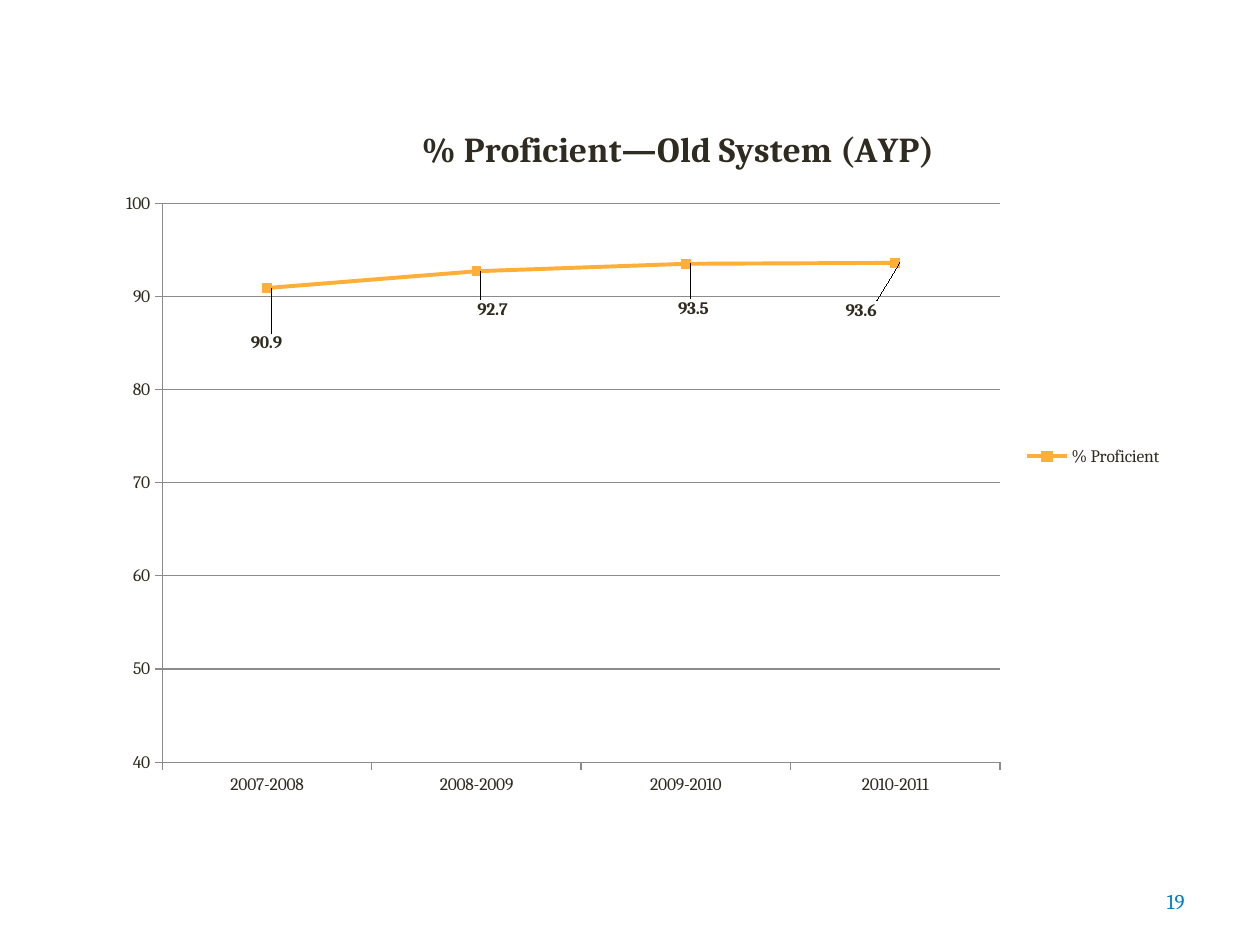
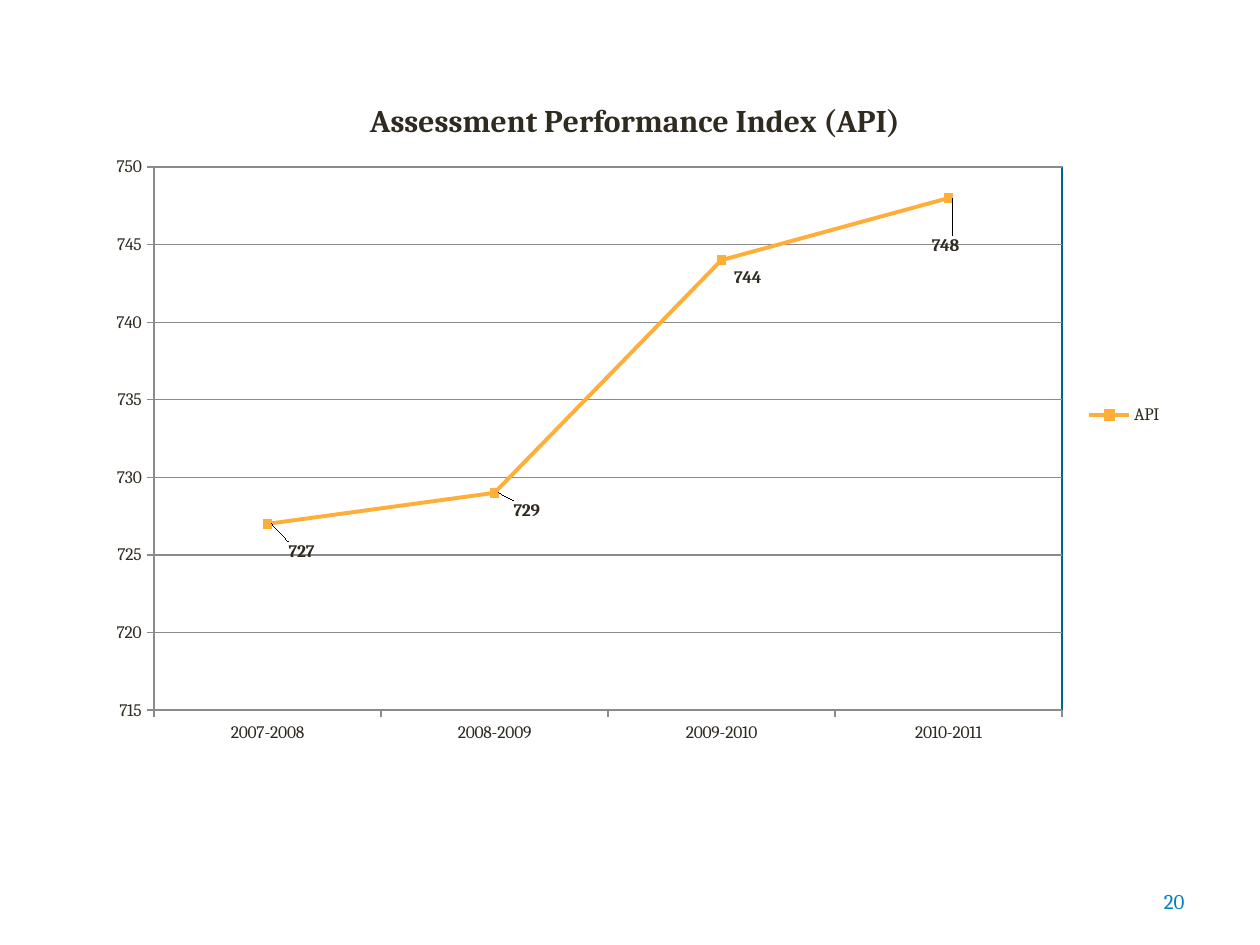
import pptx
import pptx.chart.data
import pptx.dml.color
import pptx.enum.chart
import pptx.enum.text
import pptx.oxml
import pptx.oxml.ns
import pptx.util

INK = pptx.dml.color.RGBColor(0x2F, 0x2B, 0x20)
AMBER = pptx.dml.color.RGBColor(0xFF, 0xAE, 0x37)
GREY = pptx.dml.color.RGBColor(0x8B, 0x8B, 0x8B)
NAVY = pptx.dml.color.RGBColor(0x00, 0x61, 0x93)
PAGE_BLUE = pptx.dml.color.RGBColor(0x00, 0x81, 0xC4)
FONT = "Cambria"
WIDTH, HEIGHT = pptx.util.Inches(10), pptx.util.Inches(7.5)
SCHOOL_YEARS = ["2007-2008", "2008-2009", "2009-2010", "2010-2011"]

CHARTS = [
    dict(page=19, title="% Proficient—Old System (AYP)", title_size=20, title_at=(29, 2.2),
         measure="% Proficient", scores=[90.9, 92.7, 93.5, 93.6], scale=(40, 100, 10),
         frame=(0.083, 0.111, 0.85, 0.744), plot=(5.4, 14, 78.2, 79.5),
         shifts=[(-2.4, 7.8), (-0.8, 5.4), (-1.6, 6.4), (-5.5, 6.8)]),
    dict(page=20, title="Assessment Performance Index (API)", title_size=18,
         measure="API", scores=[727, 729, 744, 748], scale=(715, 750, 5),
         frame=(0.075, 0.078, 0.858, 0.722), plot=(5.5, 13.7, 84, 79.6), border=NAVY,
         shifts=[(1.1, 4.1), (0.9, 2.6), (0.3, 2.6), (-2.4, 6.9)]),
]


def share(left, top, width, height):
    """Turn shares of the slide into lengths."""
    return (int(left * WIDTH), int(top * HEIGHT), int(width * WIDTH), int(height * HEIGHT))


def style_font(font, size=10, color=INK, bold=False):
    """Give a font the deck's typeface, with a size, colour and weight."""
    font.name = FONT
    font.size = pptx.util.Pt(size)
    font.bold = bold
    font.color.rgb = color


def add_text(slide, text, box, align, **style):
    """Add one line of text, centred vertically in its box."""
    frame = slide.shapes.add_textbox(*share(*box)).text_frame
    frame.word_wrap = True
    frame.vertical_anchor = pptx.enum.text.MSO_ANCHOR.MIDDLE
    line = frame.paragraphs[0]
    line.alignment = align
    run = line.add_run()
    run.text = text
    style_font(run.font, **style)


def place(part, percents, lead="", index=0):
    """Set the manual layout of a chart part in percent of the chart."""
    layout = part.find(pptx.oxml.ns.qn("c:layout"))
    if layout is not None:
        index = part.index(layout)
        part.remove(layout)
    values = "".join(f'<c:{side} val="{percent / 100:.3f}"/>'
                     for side, percent in zip("xywh", percents))
    part.insert(index, pptx.oxml.parse_xml(
        f'<c:layout {pptx.oxml.ns.nsdecls("c")}><c:manualLayout>{lead}{values}'
        '</c:manualLayout></c:layout>'))


def style_axes(chart, scale):
    """Format both axes and set the value scale."""
    scores, years = chart.value_axis, chart.category_axis
    scores.minimum_scale, scores.maximum_scale, scores.major_unit = scale
    scores.has_major_gridlines = True
    for line in (scores.major_gridlines.format.line, scores.format.line, years.format.line):
        line.color.rgb = GREY
        line.width = pptx.util.Pt(0.75)
    for axis in (scores, years):
        axis.major_tick_mark = pptx.enum.chart.XL_TICK_MARK.OUTSIDE
        style_font(axis.tick_labels.font)


def style_trend(trend, shifts):
    """Format the score line, its markers and its shifted value labels."""
    trend.smooth = False
    trend.format.line.color.rgb = AMBER
    trend.format.line.width = pptx.util.Pt(2.25)
    trend.marker.style = pptx.enum.chart.XL_MARKER_STYLE.SQUARE
    trend.marker.size = 5
    trend.marker.format.fill.solid()
    trend.marker.format.fill.fore_color.rgb = AMBER
    trend.marker.format.line.color.rgb = AMBER
    trend.data_labels.show_value = True
    style_font(trend.data_labels.font, bold=True)
    for number in range(len(shifts)):
        label = trend.points[number].data_label
        style_font(label.font, bold=True)
        label.position = pptx.enum.chart.XL_LABEL_POSITION.RIGHT


def add_score_chart(slide, title, title_size, measure, scores, scale, frame, plot, shifts,
                    title_at=None, border=None):
    """Add a line chart of scores by school year."""
    data = pptx.chart.data.CategoryChartData()
    data.categories = SCHOOL_YEARS
    data.add_series(measure, scores)
    chart = slide.shapes.add_chart(
        pptx.enum.chart.XL_CHART_TYPE.LINE_MARKERS, *share(*frame), data).chart
    style_font(chart.font)
    chart.has_title = True
    heading = chart.chart_title.text_frame.paragraphs[0].add_run()
    heading.text = title
    style_font(heading.font, size=title_size, bold=True)
    chart.has_legend = True
    chart.legend.position = pptx.enum.chart.XL_LEGEND_POSITION.RIGHT
    chart.legend.include_in_layout = False
    style_font(chart.legend.font)
    chart.plots[0].vary_by_categories = False
    style_axes(chart, scale)
    style_trend(chart.plots[0].series[0], shifts)

    edges = '<c:xMode val="edge"/><c:yMode val="edge"/>'
    plot_area = chart.element.xpath(".//c:plotArea")[0]
    place(plot_area, plot, '<c:layoutTarget val="inner"/>' + edges)
    if title_at:
        place(chart.element.xpath("./c:chart/c:title")[0], title_at, edges, index=1)
    for label, shift in zip(chart.element.xpath(".//c:dLbl"), shifts):
        place(label, shift, index=1)
    if border:
        plot_area.append(pptx.oxml.parse_xml(
            f'<c:spPr {pptx.oxml.ns.nsdecls("c", "a")}><a:noFill/><a:ln w="9525"><a:solidFill>'
            f'<a:srgbClr val="{border}"/></a:solidFill></a:ln></c:spPr>'))


def add_score_slide(deck, page, **chart):
    """Add a slide with a score chart and its page number."""
    slide = deck.slides.add_slide(deck.slide_layouts[6])
    add_text(slide, str(page), (0.717, 0.927, 0.233, 0.053),
             pptx.enum.text.PP_ALIGN.RIGHT, size=12, color=PAGE_BLUE)
    add_score_chart(slide, **chart)


def main():
    """Build the deck."""
    deck = pptx.Presentation()
    deck.slide_width, deck.slide_height = WIDTH, HEIGHT
    for chart in CHARTS:
        add_score_slide(deck, **chart)
    deck.save("out.pptx")


if __name__ == "__main__":
    main()
